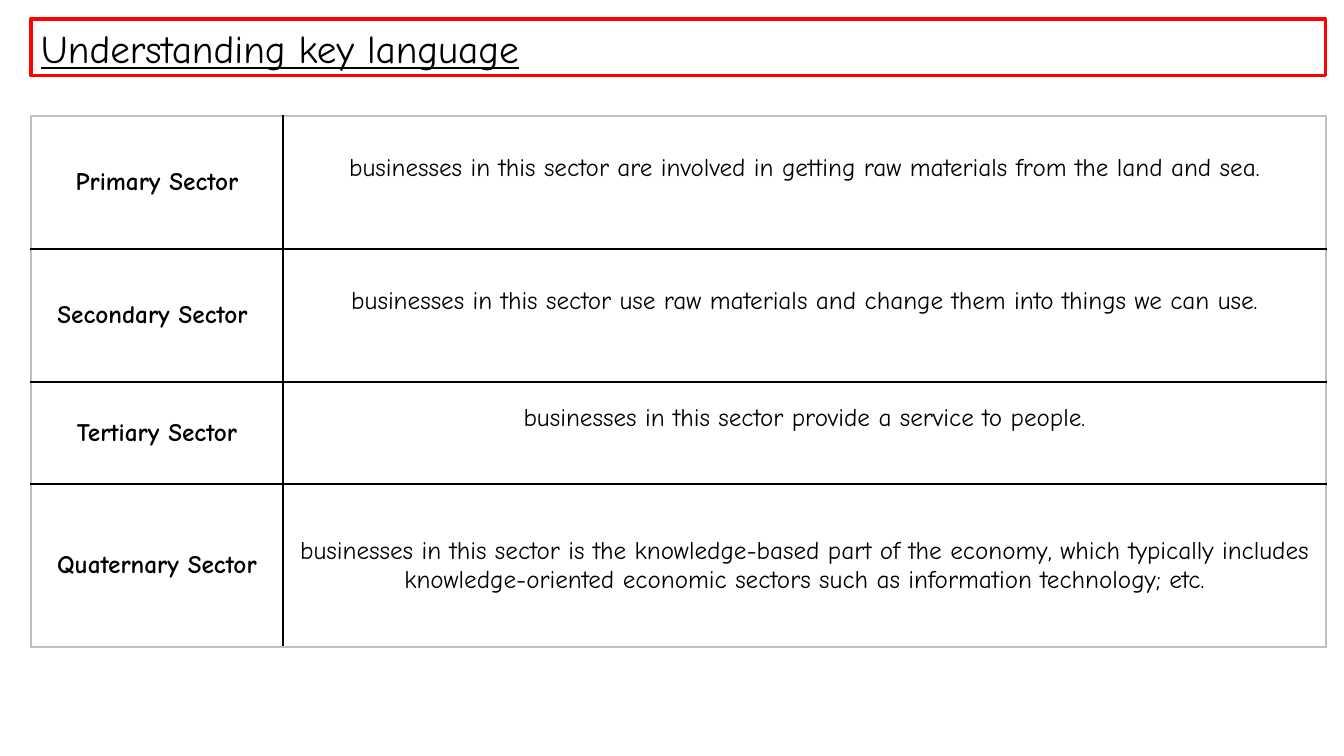
from lxml import etree
from pptx import Presentation
from pptx.dml.color import RGBColor
from pptx.enum.text import MSO_ANCHOR, PP_ALIGN
from pptx.oxml.ns import qn
from pptx.util import Pt

PX = 914400 / 100.8
FONT = "Comic Neue"
BLACK, RED, GREY = "000000", "FF0000", "BFBFBF"
MIDDLE, CENTER = MSO_ANCHOR.MIDDLE, PP_ALIGN.CENTER

LEFT, WIDTH = 31, 1295
TITLE_TOP, TITLE_HEIGHT = 19, 57
TABLE_TOP = 116
COLUMN_WIDTHS = [252, 1043]
INSET = 5
RAISE = 29  # one line of text kept free below a raised definition

# term, definition, row height, whether the definition sits above the middle
SECTORS = [
    ("Primary Sector",
     "businesses in this sector are involved in getting raw materials from the land and sea.",
     133, True),
    ("Secondary Sector ",
     "businesses in this sector use raw materials and change them into things we can use.",
     133, True),
    ("Tertiary Sector",
     "businesses in this sector provide a service to people.",
     102, True),
    ("Quaternary Sector",
     "businesses in this sector is the knowledge-based part of the economy, which typically "
     "includes knowledge-oriented economic sectors such as information technology; etc.",
     163, False),
]


def px(length):
    return round(length * PX)


def color(hex_value):
    return RGBColor.from_string(hex_value)


prs = Presentation()
prs.slide_width, prs.slide_height = px(1344), px(756)
slide = prs.slides.add_slide(prs.slide_layouts[6])

# Heading
heading = slide.shapes.add_textbox(px(LEFT), px(TITLE_TOP), px(WIDTH), px(TITLE_HEIGHT))
heading.line.color.rgb = color(RED)
heading.line.width = Pt(2.25)
heading.text_frame.word_wrap = True
heading.text_frame.text = "Understanding key language"
heading_font = heading.text_frame.paragraphs[0].runs[0].font
heading_font.name, heading_font.size = FONT, Pt(28)
heading_font.underline = True
heading_font.color.rgb = color(BLACK)

# Sector definitions
table_height = sum(height for _, _, height, _ in SECTORS)
sectors = slide.shapes.add_table(
    len(SECTORS), len(COLUMN_WIDTHS),
    px(LEFT), px(TABLE_TOP), px(WIDTH), px(table_height)).table
sectors.first_row = False
sectors.horz_banding = False
for column, width in zip(sectors.columns, COLUMN_WIDTHS):
    column.width = px(width)

last_row, last_col = len(SECTORS) - 1, len(COLUMN_WIDTHS) - 1
for row, (term, definition, height, raised) in enumerate(SECTORS):
    sectors.rows[row].height = px(height)
    for col, wording in enumerate((term, definition)):
        cell = sectors.cell(row, col)
        cell.vertical_anchor = MIDDLE
        cell.margin_bottom = px(INSET + RAISE if raised and col == 1 else INSET)
        cell.text_frame.text = wording
        paragraph = cell.text_frame.paragraphs[0]
        paragraph.alignment = CENTER
        font = paragraph.runs[0].font
        font.name, font.size, font.bold = FONT, Pt(18), col == 0
        font.color.rgb = color(BLACK)

        # Outer edges are grey, inner rules black
        outer_edges = {"a:lnL": col == 0, "a:lnR": col == last_col,
                       "a:lnT": row == 0, "a:lnB": row == last_row}
        properties = cell._tc.get_or_add_tcPr()
        for edge, is_outer in outer_edges.items():
            border = etree.SubElement(properties, qn(edge), w=str(Pt(1)))
            fill = etree.SubElement(border, qn("a:solidFill"))
            etree.SubElement(fill, qn("a:srgbClr"), val=GREY if is_outer else BLACK)
        cell.fill.background()

prs.save("out.pptx")
